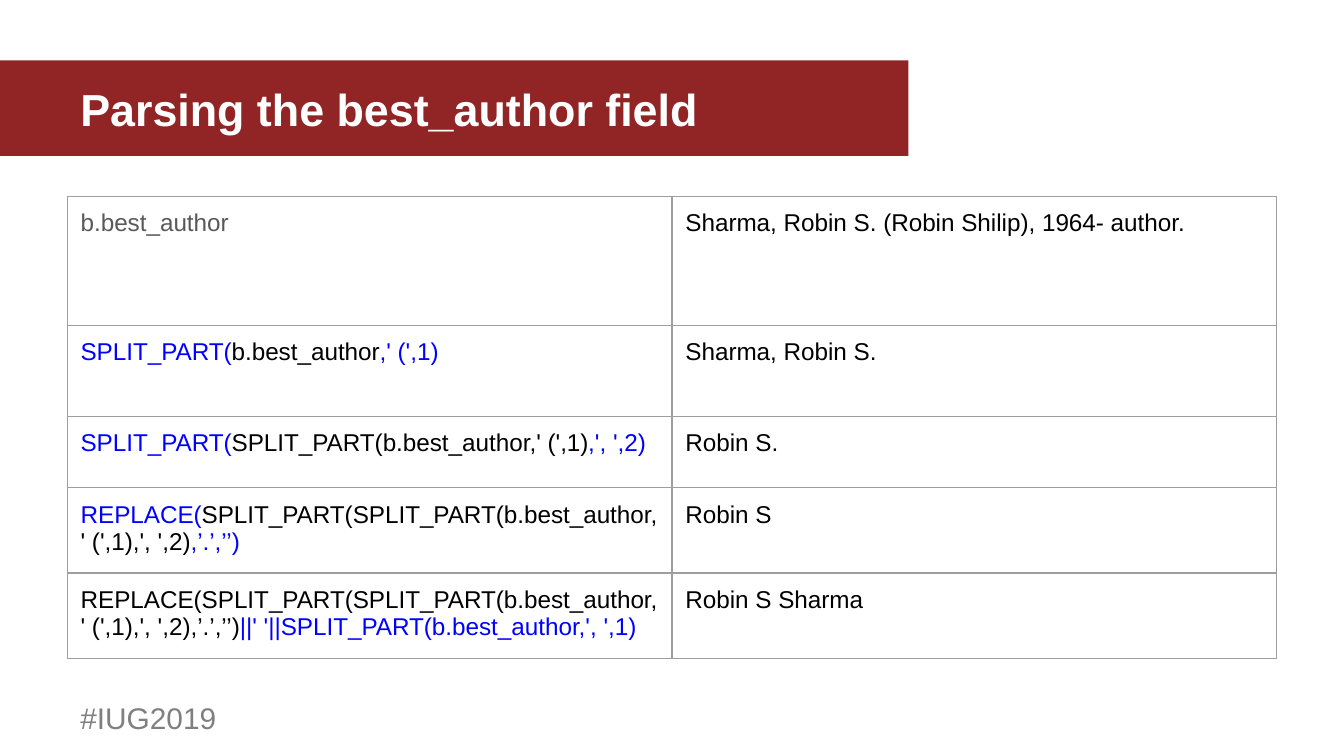
from typing import NamedTuple

from lxml.etree import SubElement
from pptx import Presentation
from pptx.dml.color import RGBColor
from pptx.enum.shapes import MSO_SHAPE
from pptx.enum.text import MSO_ANCHOR, MSO_AUTO_SIZE
from pptx.oxml.ns import qn
from pptx.util import Inches, Pt

FONT = "Arial"
BLACK, BLUE, GREY = "000000", "0000FF", "595959"
BORDER = "9E9E9E"


class Piece(NamedTuple):
    text: str
    color: str = BLACK


class Step(NamedTuple):
    expression: list[Piece]
    result: str
    height: float


STEPS = [
    Step([Piece("b.best_author", GREY)],
         "Sharma, Robin S. (Robin Shilip), 1964- author.", 0.96),
    Step([Piece("SPLIT_PART(", BLUE), Piece("b.best_author"), Piece(",' (',1)", BLUE)],
         "Sharma, Robin S.", 0.68),
    Step([Piece("SPLIT_PART(", BLUE), Piece("SPLIT_PART(b.best_author,' (',1)"),
          Piece(",', ',2)", BLUE)],
         "Robin S.", 0.53),
    Step([Piece("REPLACE(", BLUE),
          Piece("SPLIT_PART(SPLIT_PART(b.best_author,' (',1),', ',2)"),
          Piece(",’.’,’’)", BLUE)],
         "Robin S", 0.62),
    Step([Piece("REPLACE(SPLIT_PART(SPLIT_PART(b.best_author,' (',1),', ',2),’.’,’’)"),
          Piece("||' '||SPLIT_PART(b.best_author,', ',1)", BLUE)],
         "Robin S Sharma", 0.62),
]


def rgb(color: str) -> RGBColor:
    return RGBColor.from_string(color)


def format_font(font, size: float, color: str, bold: bool = False) -> None:
    font.name = FONT
    font.size = Pt(size)
    font.bold = bold
    font.color.rgb = rgb(color)


def add_label(slide, text: str, box: tuple, size: float, color: str, bold: bool = False):
    frame = slide.shapes.add_textbox(*map(Inches, box)).text_frame
    frame.text = text
    format_font(frame.paragraphs[0].runs[0].font, size, color, bold)
    return frame


def add_borders(cell) -> None:
    properties = cell._tc.get_or_add_tcPr()
    for index, side in enumerate(("a:lnL", "a:lnR", "a:lnT", "a:lnB")):
        line = properties.makeelement(qn(side), {"w": str(Pt(0.75))})
        fill = SubElement(line, qn("a:solidFill"))
        SubElement(fill, qn("a:srgbClr"), val=BORDER)
        properties.insert(index, line)


def fill_cell(cell, pieces: list[Piece]) -> None:
    cell.fill.background()
    cell.margin_left = cell.margin_right = Inches(0.1)
    cell.margin_top = cell.margin_bottom = Inches(0.1)
    paragraph = cell.text_frame.paragraphs[0]
    paragraph.line_spacing = 1.0
    for piece in pieces:
        run = paragraph.add_run()
        run.text = piece.text
        format_font(run.font, 13, piece.color)
    add_borders(cell)


def add_steps(slide, steps: list[Step]) -> None:
    height = sum(step.height for step in steps)
    table = slide.shapes.add_table(len(steps), 2, Inches(0.5), Inches(1.46),
                                   Inches(9), Inches(height)).table
    table.first_row = table.horz_banding = False
    for row, step in enumerate(steps):
        table.rows[row].height = Inches(step.height)
        fill_cell(table.cell(row, 0), step.expression)
        fill_cell(table.cell(row, 1), [Piece(step.result)])
    table.cell(0, 0).text_frame.paragraphs[0].space_after = Pt(16)


def main() -> None:
    # Widescreen 16:9 slide
    deck = Presentation()
    deck.slide_width = Inches(10)
    deck.slide_height = Inches(10 * 9 / 16)
    slide = deck.slides.add_slide(deck.slide_layouts[6])

    # Title band, slightly transparent
    band = slide.shapes.add_shape(MSO_SHAPE.RECTANGLE, 0, Inches(0.45),
                                  Inches(6.76), Inches(0.71))
    band.shadow.inherit = False
    band.line.fill.background()
    band.fill.solid()
    band.fill.fore_color.rgb = rgb("800000")
    band_color = band._element.spPr.find(qn("a:solidFill")).find(qn("a:srgbClr"))
    SubElement(band_color, qn("a:alpha"), val="86000")

    # Hashtag footer
    hashtag = add_label(slide, "#IUG2019", (0.5, 5.08, 1.22, 0.41), 16, "808080")
    hashtag.word_wrap = False
    hashtag.auto_size = MSO_AUTO_SIZE.SHAPE_TO_FIT_TEXT
    hashtag.paragraphs[0].line_spacing = 1.3

    # Title
    title = add_label(slide, "Parsing the best_author field",
                      (0.5, 0.45, 9, 0.72), 24, "FFFFFF", bold=True)
    title.word_wrap = True
    title.vertical_anchor = MSO_ANCHOR.MIDDLE

    # Parsing steps and their results
    add_steps(slide, STEPS)
    deck.save("out.pptx")


if __name__ == "__main__":
    main()
